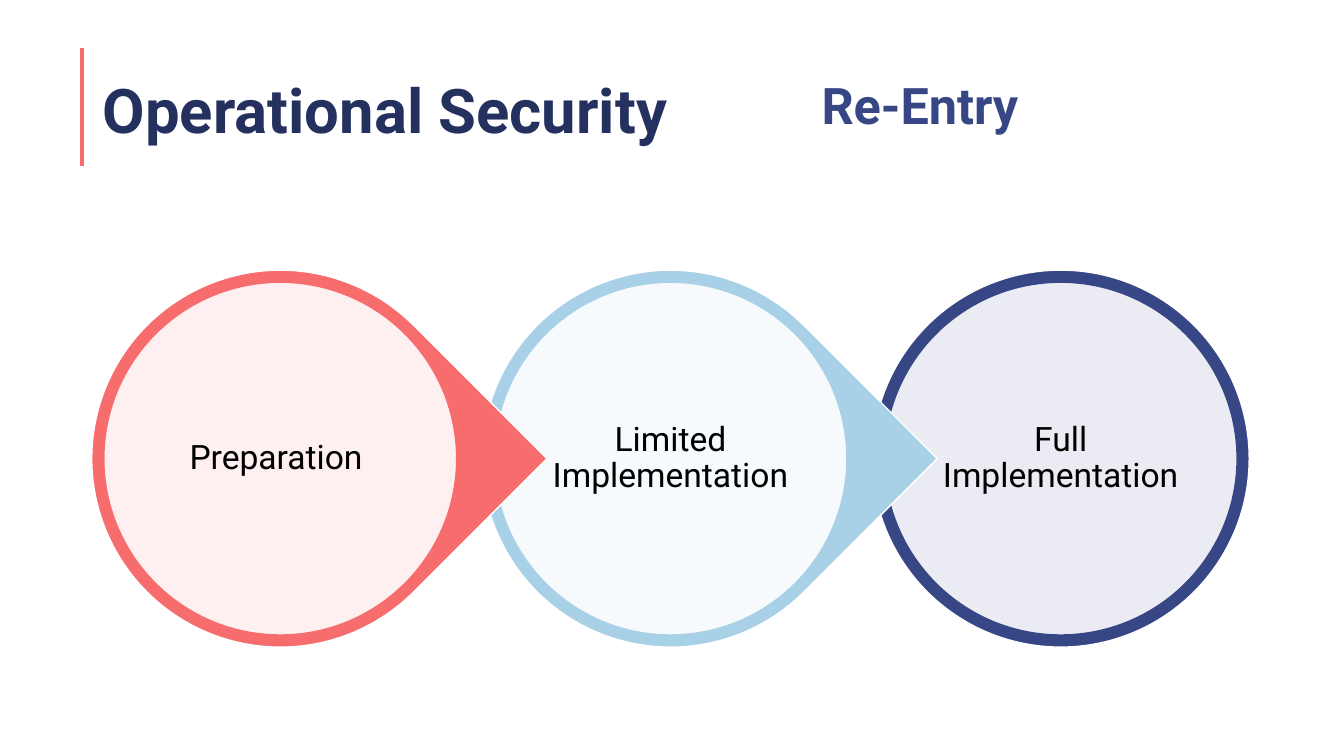
from dataclasses import dataclass

from lxml.etree import SubElement as Sub
from pptx import Presentation
from pptx.dml.color import RGBColor as RGB
from pptx.enum.shapes import MSO_CONNECTOR as Link, MSO_SHAPE as Kind
from pptx.enum.text import MSO_ANCHOR as Anchor, PP_ALIGN as Align
from pptx.oxml.ns import qn
from pptx.shapes.autoshape import Shape
from pptx.util import Pt

PX = 9144  # 100 px to the inch
FONT = "Roboto"
WHITE = RGB(0xFF, 0xFF, 0xFF)
BLACK = RGB(0x00, 0x00, 0x00)
NAVY = RGB(0x24, 0x30, 0x5E)
BLUE = RGB(0x37, 0x47, 0x85)
SKY = RGB(0xA8, 0xD0, 0xE6)
CORAL = RGB(0xF7, 0x6C, 0x6C)

LEFT, TOP, PITCH = 91, 268, 387  # first ring and step to the next
RING, DISC, LABEL = 374, 350, 250  # diameters and label side


@dataclass
class Stage:
    name: str
    color: RGB
    kind: Kind


STAGES = [
    Stage("Preparation ", CORAL, Kind.TEAR),
    Stage("Limited Implementation", SKY, Kind.TEAR),
    Stage("Full Implementation", BLUE, Kind.OVAL),
]

deck = Presentation()
deck.slide_width, deck.slide_height = 1333 * PX, 750 * PX
slide = deck.slides.add_slide(deck.slide_layouts[6])


def add_text(text: str, x: int, y: int, w: int, h: int, *, size: int,
             color: RGB, bold: bool = False, align: Align = Align.LEFT,
             anchor: Anchor = Anchor.MIDDLE, inset: int | None = None,
             before: int = 0) -> None:
    box = slide.shapes.add_textbox(x * PX, y * PX, w * PX, h * PX)
    frame = box.text_frame
    frame.word_wrap = True
    frame.vertical_anchor = anchor
    if inset is not None:
        frame.margin_left = frame.margin_right = inset * PX
        frame.margin_top = frame.margin_bottom = inset * PX
    para = frame.paragraphs[0]
    para.alignment = align
    para.line_spacing = 0.9
    para.space_before = Pt(before)
    run = para.add_run()
    run.text = text
    run.font.name = FONT
    run.font.size = Pt(size)
    run.font.bold = bold
    run.font.color.rgb = color


def add_round(kind: Kind, x: int, y: int, side: int, fill: RGB,
              line: RGB) -> Shape:
    shape = slide.shapes.add_shape(kind, x * PX, y * PX, side * PX, side * PX)
    shape.shadow.inherit = False
    shape.fill.solid()
    shape.fill.fore_color.rgb = fill
    shape.line.color.rgb = line
    shape.line.width = Pt(1)
    return shape


def add_stage(stage: Stage, x: int) -> None:
    # Outer ring; a teardrop turned to point at the next stage
    ring = add_round(stage.kind, x, TOP, RING, stage.color, WHITE)
    if stage.kind == Kind.TEAR:
        ring.adjustments[0] = 1
        ring.rotation = 45

    # Pale disc that lets the ring colour through
    gap = (RING - DISC) // 2
    disc = add_round(Kind.OVAL, x + gap, TOP + gap, DISC, WHITE, stage.color)
    tint = disc.fill._xPr.find(qn("a:solidFill"))[0]
    Sub(tint, qn("a:alpha"), val="90000")

    # Label
    gap = (RING - LABEL) // 2
    add_text(stage.name, x + gap, TOP + gap, LABEL, LABEL, size=24,
             color=BLACK, align=Align.CENTER, inset=3)


# Accent rule beside the title
rule = slide.shapes.add_connector(Link.STRAIGHT, 81 * PX, 48 * PX,
                                  81 * PX, 165 * PX)
rule.line.color.rgb = CORAL
rule.line.width = Pt(3)
Sub(rule.line._get_or_add_ln().getparent(), qn("a:effectLst"))

# Headings
add_text("Operational Security", 92, 40, 1150, 145, size=44, color=NAVY,
         bold=True)
add_text("Re-Entry", 805, 75, 378, 75, size=36, color=BLUE, bold=True,
         anchor=Anchor.TOP, before=10)

# Stages, last first so that each point overlaps the next ring
for i, stage in reversed(list(enumerate(STAGES))):
    add_stage(stage, LEFT + i * PITCH)

deck.save("out.pptx")
